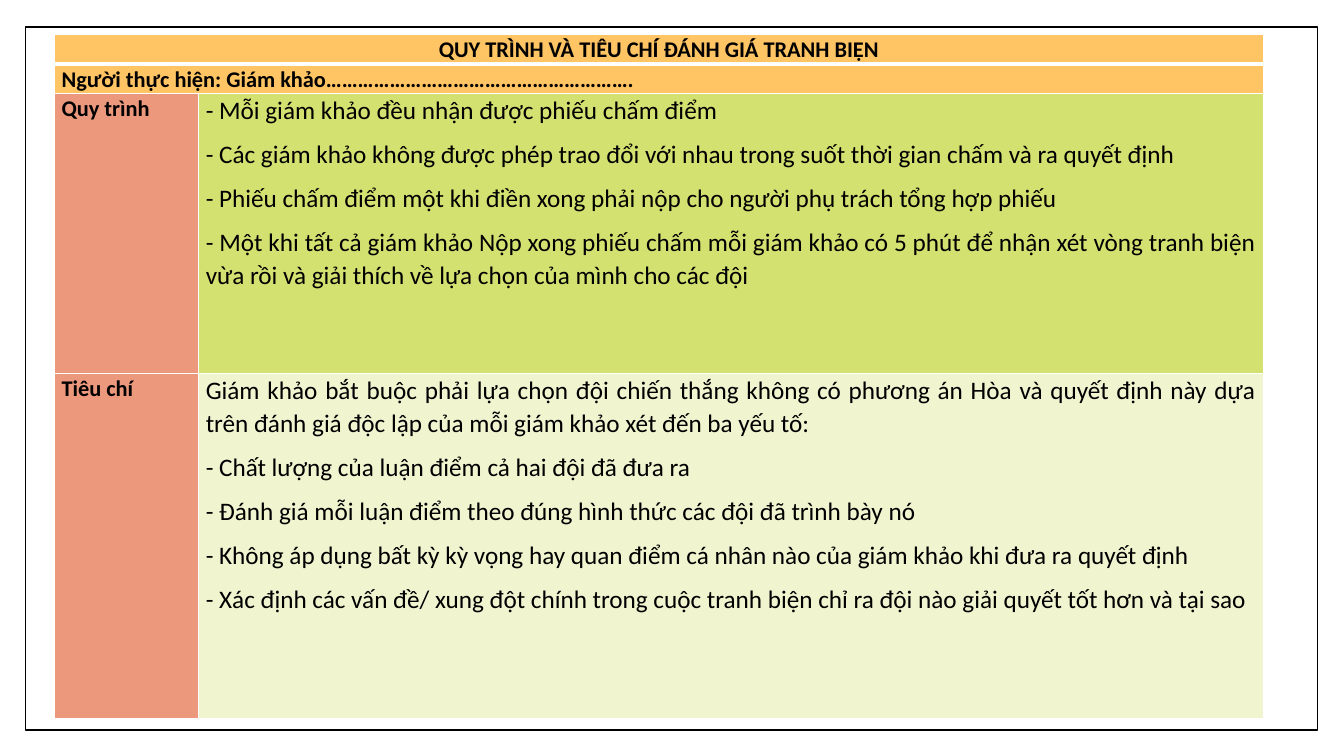
import pptx
import pptx.dml.color
import pptx.enum.shapes
import pptx.enum.text
import pptx.oxml
import pptx.oxml.ns
import pptx.util

Pt = pptx.util.Pt
ALIGN = pptx.enum.text.PP_ALIGN

TITLE = "QUY TRÌNH VÀ TIÊU CHÍ ĐÁNH GIÁ TRANH BIỆN"
JUDGE = "Người thực hiện: Giám khảo…………………………………………………."
PROCESS = [
    "- Mỗi giám khảo đều nhận được phiếu chấm điểm",
    "- Các giám khảo không được phép trao đổi với nhau trong suốt thời gian chấm và ra quyết định",
    "- Phiếu chấm điểm một khi điền xong phải nộp cho người phụ trách tổng hợp phiếu",
    "- Một khi tất cả giám khảo Nộp xong phiếu chấm mỗi giám khảo có 5 phút để nhận xét "
    "vòng tranh biện vừa rồi và giải thích về lựa chọn của mình cho các đội",
]
CRITERIA = [
    "Giám khảo bắt buộc phải lựa chọn đội chiến thắng không có phương án Hòa và quyết định "
    "này dựa trên đánh giá độc lập của mỗi giám khảo xét đến ba yếu tố:",
    "- Chất lượng của luận điểm cả hai đội đã đưa ra",
    "- Đánh giá mỗi luận điểm theo đúng hình thức các đội đã trình bày nó",
    "- Không áp dụng bất kỳ kỳ vọng hay quan điểm cá nhân nào của giám khảo khi đưa ra quyết định",
    "- Xác định các vấn đề/ xung đột chính trong cuộc tranh biện chỉ ra đội nào giải quyết "
    "tốt hơn và tại sao",
]


def color(hex_code):
    return pptx.dml.color.RGBColor.from_string(hex_code)


def set_borders(cell, top=1, bottom=1):
    """White rules on the four sides, widths in points."""
    properties = cell._tc.get_or_add_tcPr()
    for side, width in (("L", 1), ("R", 1), ("T", top), ("B", bottom)):
        properties.append(pptx.oxml.parse_xml(
            f'<a:ln{side} {pptx.oxml.ns.nsdecls("a")} w="{Pt(width)}">'
            f'<a:solidFill><a:srgbClr val="FFFFFF"/></a:solidFill></a:ln{side}>'))


def fill_cell(cell, lines, fill, size=16, bold=True, align=ALIGN.JUSTIFY):
    cell.fill.solid()
    cell.fill.fore_color.rgb = color(fill)
    cell.margin_left = cell.margin_right = Pt(5)
    cell.margin_top = cell.margin_bottom = 0
    frame = cell.text_frame
    frame.text = "\n".join(lines)
    for paragraph in frame.paragraphs:
        paragraph.alignment = align
        paragraph.line_spacing = 1.07
        paragraph.space_after = Pt(8)
        paragraph.font.name = "Calibri"
        paragraph.font.size = Pt(size)
        paragraph.font.bold = bold
        paragraph.font.color.rgb = color("000000")


def add_frame(slide, left, top, width, height):
    frame = slide.shapes.add_shape(pptx.enum.shapes.MSO_SHAPE.RECTANGLE,
                                   Pt(left), Pt(top), Pt(width), Pt(height))
    frame.shadow.inherit = False
    frame.fill.solid()
    frame.fill.fore_color.rgb = color("FFFFFF")
    frame.line.color.rgb = color("000000")
    frame.line.width = Pt(1)


def add_rubric(slide, left, top, width, height):
    label_width, heading_height, process_height = 103, 20.16, 200.2
    rubric = slide.shapes.add_table(4, 2, Pt(left), Pt(top), Pt(width), Pt(height)).table
    for column, column_width in zip(rubric.columns, (label_width, width - label_width)):
        column.width = Pt(column_width)
    criteria_height = height - 2 * heading_height - process_height
    row_heights = (heading_height, heading_height, process_height, criteria_height)
    for row, row_height in zip(rubric.rows, row_heights):
        row.height = Pt(row_height)

    # Rules, with a thicker one below the title
    for index, row in enumerate(rubric.rows):
        for cell in row.cells:
            set_borders(cell, top=3 if index == 1 else 1, bottom=3 if index == 0 else 1)

    # Heading rows across both columns
    for index, (heading, align) in enumerate(((TITLE, ALIGN.CENTER), (JUDGE, ALIGN.JUSTIFY))):
        rubric.cell(index, 0).merge(rubric.cell(index, 1))
        fill_cell(rubric.cell(index, 0), [heading], "FFC565", align=align)

    # Label and details of each section
    sections = (("Quy trình", PROCESS, "D3E171"), ("Tiêu chí", CRITERIA, "F0F5D0"))
    for index, (label, details, fill) in enumerate(sections, start=2):
        fill_cell(rubric.cell(index, 0), [label], "EC987D")
        fill_cell(rubric.cell(index, 1), details, fill, size=18, bold=False)


def main():
    deck = pptx.Presentation()
    deck.slide_width, deck.slide_height = Pt(960), Pt(540)
    slide = deck.slides.add_slide(deck.slide_layouts[6])
    add_frame(slide, 18, 19.4, 923, 502)
    add_rubric(slide, 39, 24.6, 863.3, 487)
    deck.save("out.pptx")


if __name__ == "__main__":
    main()
